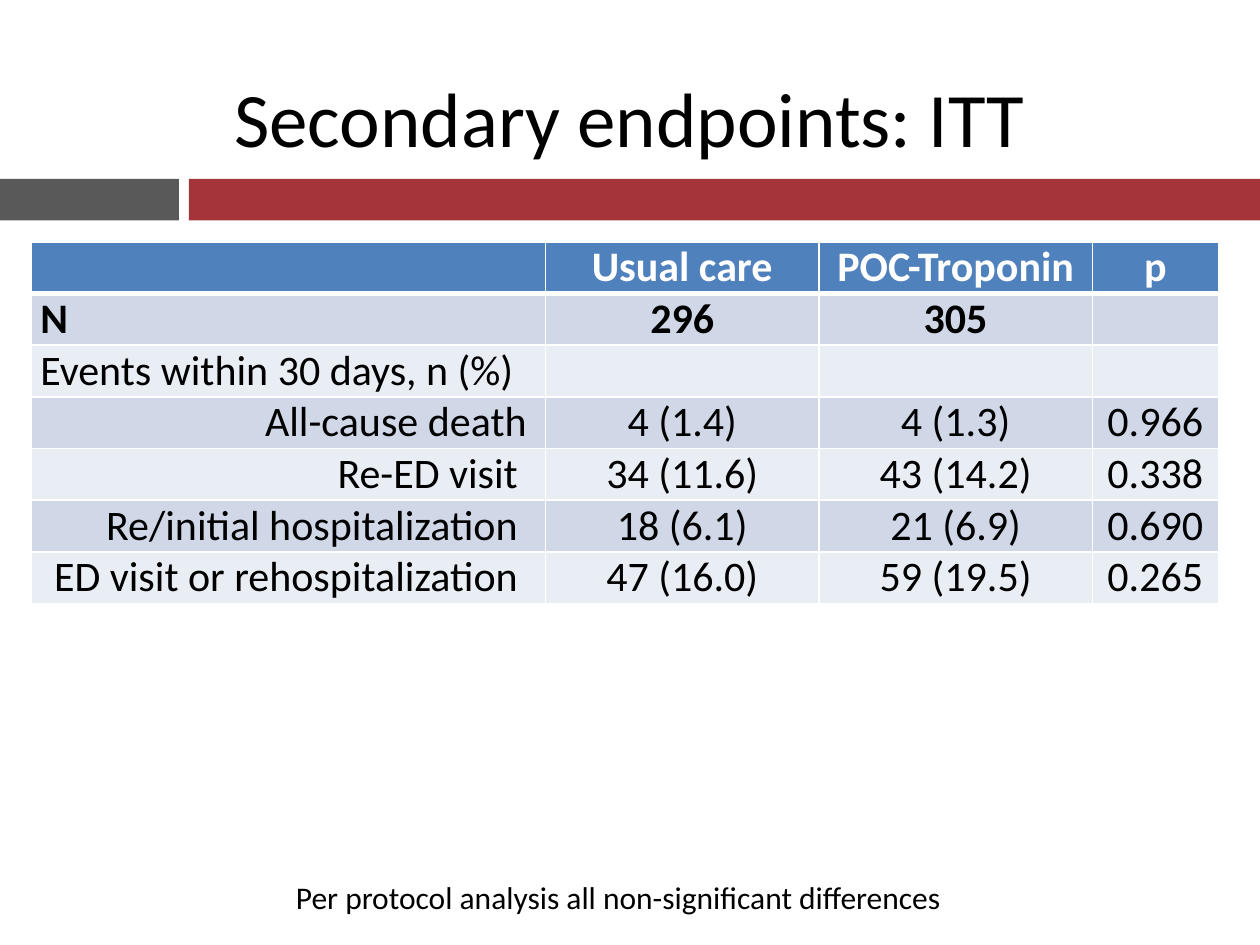
from dataclasses import dataclass

from lxml.etree import SubElement
from pptx import Presentation
from pptx.dml.color import RGBColor
from pptx.enum.shapes import MSO_SHAPE
from pptx.enum.text import MSO_ANCHOR, MSO_AUTO_SIZE, PP_ALIGN
from pptx.oxml.ns import qn
from pptx.util import Inches, Pt


@dataclass(frozen=True)
class Theme:
    font: str = "Calibri"
    title_size: int = 44
    table_size: int = 24
    note_size: int = 18
    black: str = "000000"
    white: str = "FFFFFF"
    red: str = "A4343A"
    gray: str = "595959"
    header: str = "4F81BD"
    bands: tuple = ("E9EDF4", "D0D8E8")


class SlideBuilder:
    """Draws styled elements on the current slide."""

    def __init__(self, prs, theme):
        self.theme = theme
        self.s = prs.slides.add_slide(prs.slide_layouts[5])

    def run(self, p, text, size, color, bold=False):
        r = p.add_run()
        r.text = text
        r.font.name = self.theme.font
        r.font.size = Pt(size)
        r.font.bold = bold
        r.font.color.rgb = RGBColor.from_string(color)

    def title(self, text, left, top, width, height):
        sp = self.s.shapes.title
        sp.left, sp.top, sp.width, sp.height = map(Inches, (left, top, width, height))
        tf = sp.text_frame
        tf.vertical_anchor = MSO_ANCHOR.MIDDLE
        p = tf.paragraphs[0]
        p.alignment = PP_ALIGN.CENTER
        self.run(p, text, self.theme.title_size, self.theme.black)

    def bar(self, color, left, top, width, height):
        sp = self.s.shapes.add_shape(MSO_SHAPE.RECTANGLE, *map(Inches, (left, top, width, height)))
        sp.shadow.inherit = False
        sp.fill.solid()
        sp.fill.fore_color.rgb = RGBColor.from_string(color)
        sp.line.fill.background()

    def note(self, text, left, top, width, height):
        tf = self.s.shapes.add_textbox(*map(Inches, (left, top, width, height))).text_frame
        tf.word_wrap = False
        tf.auto_size = MSO_AUTO_SIZE.SHAPE_TO_FIT_TEXT
        self.run(tf.paragraphs[0], text, self.theme.note_size, self.theme.black)

    def borders(self, cell, top, bottom):
        tcPr = cell._tc.get_or_add_tcPr()
        for side, width in (("L", 1), ("R", 1), ("T", top), ("B", bottom)):
            ln = SubElement(tcPr, qn(f"a:ln{side}"), w=str(Pt(width)))
            fill = SubElement(ln, qn("a:solidFill"))
            SubElement(fill, qn("a:srgbClr"), val=self.theme.white)

    def cell(self, cell, text, row, align, indent):
        t = self.theme
        self.borders(cell, 3 if row == 1 else 1, 3 if row == 0 else 1)
        cell.fill.solid()
        cell.fill.fore_color.rgb = RGBColor.from_string(t.bands[row % 2] if row else t.header)
        cell.margin_left = Inches(0.07)
        cell.margin_right = Inches(0.07 + indent)
        cell.margin_top = cell.margin_bottom = 0
        p = cell.text_frame.paragraphs[0]
        p.alignment = align
        p.font.size = Pt(t.table_size)
        if text:
            self.run(p, text, t.table_size, t.black if row else t.white, row < 2)

    def table(self, rows, indents, left, top, widths, row_height):
        frame = self.s.shapes.add_table(len(rows), len(widths), Inches(left), Inches(top),
                                        Inches(sum(widths)), Inches(row_height * len(rows)))
        tbl = frame.table
        for col, width in zip(tbl.columns, widths):
            col.width = Inches(width)
        for i, values in enumerate(rows):
            tbl.rows[i].height = Inches(row_height)
            for j, text in enumerate(values):
                indent = indents.get(i, 0) if j == 0 else 0
                align = PP_ALIGN.CENTER if j else PP_ALIGN.RIGHT if indent else PP_ALIGN.LEFT
                self.cell(tbl.cell(i, j), text, i, align, indent)


ENDPOINTS = [
    ("", "Usual care", "POC-Troponin", "p"),
    ("N", "296", "305", ""),
    ("Events within 30 days, n (%)", "", "", ""),
    ("All-cause death", "4 (1.4)", "4 (1.3)", "0.966"),
    ("Re-ED visit", "34 (11.6)", "43 (14.2)", "0.338"),
    ("Re/initial hospitalization", "18 (6.1)", "21 (6.9)", "0.690"),
    ("ED visit or rehospitalization", "47 (16.0)", "59 (19.5)", "0.265"),
]
EVENT_INDENTS = {3: 0.08, 4: 0.15, 5: 0.15, 6: 0.15}


def main():
    prs = Presentation()
    prs.slide_width, prs.slide_height = Inches(10), Inches(7.5)
    theme = Theme()
    slide = SlideBuilder(prs, theme)
    slide.bar(theme.red, 1.5, 1.42, 8.5, 0.33)
    slide.bar(theme.gray, 0, 1.42, 1.42, 0.33)
    slide.title("Secondary endpoints: ITT", 0.5, 0.3, 9, 1.25)
    slide.table(ENDPOINTS, EVENT_INDENTS, 0.25, 1.92, (4.08, 2.17, 2.17, 1), 0.41)
    slide.note("Per protocol analysis all non-significant differences", 2.25, 6.92, 5.41, 0.4)
    prs.save("out.pptx")


if __name__ == "__main__":
    main()
